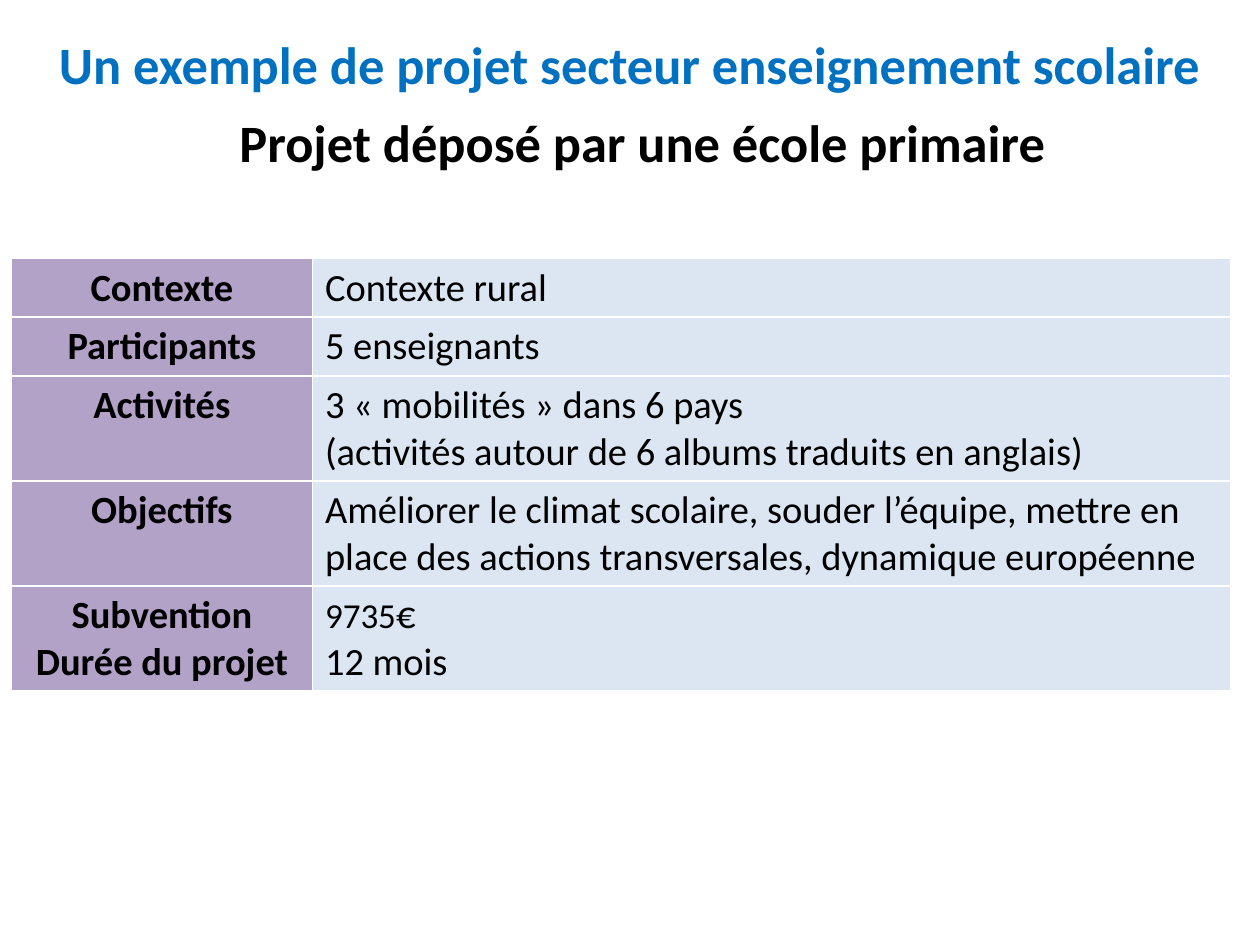
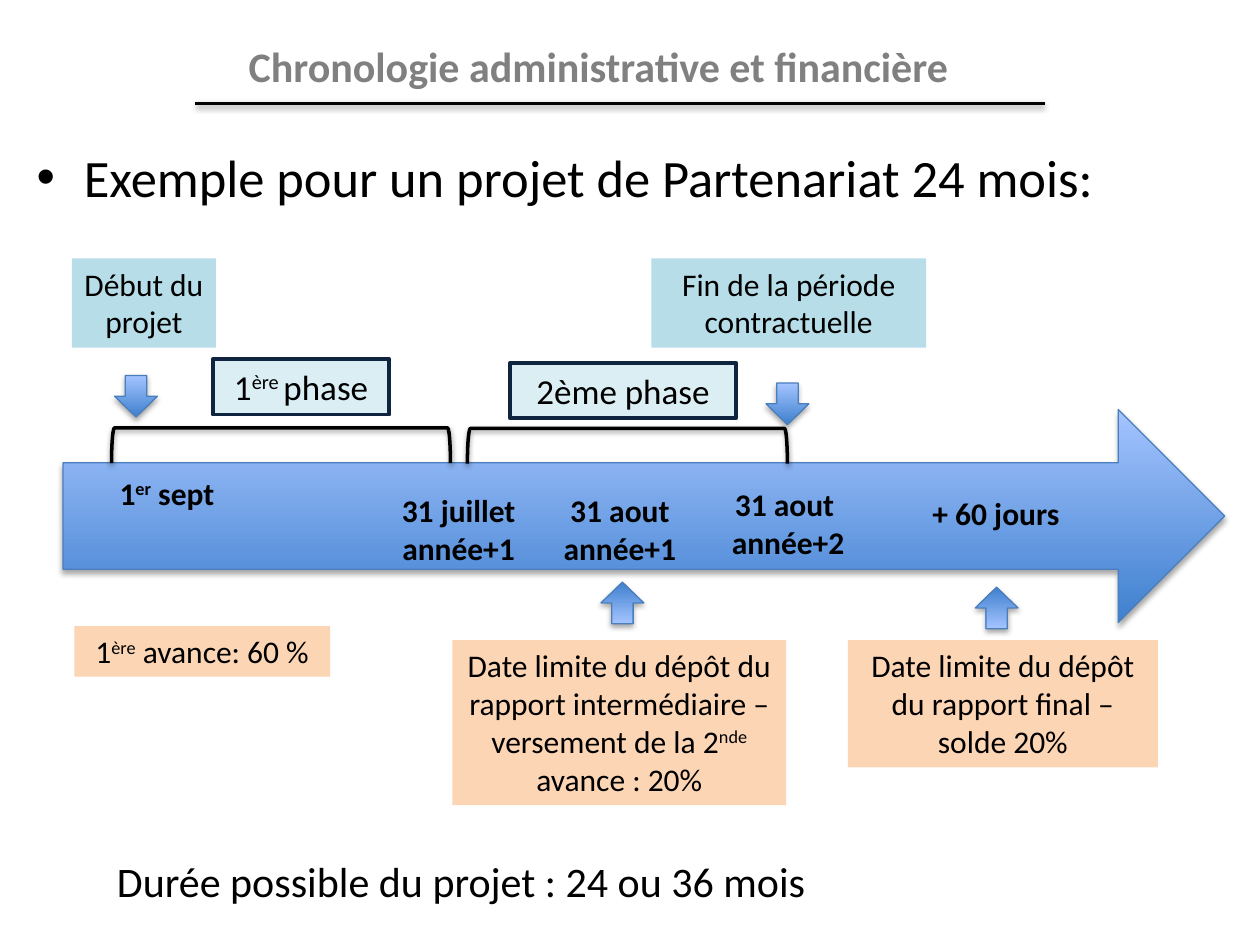
from dataclasses import dataclass

from pptx import Presentation
from pptx.dml.color import RGBColor
from pptx.enum.shapes import MSO_CONNECTOR, MSO_SHAPE
from pptx.enum.text import MSO_ANCHOR, PP_ALIGN
from pptx.oxml import parse_xml
from pptx.oxml.ns import nsdecls
from pptx.util import Inches, Pt

# Shared look
COLORS = {
    "black": "000000", "blue": "0070C0", "grey": "808080",
    "label": "B3A2C7", "value": "DCE6F2",
    "milestone": "B7DEE8", "payment": "FCD5B5",
    "phase": "DBEEF4", "phase_edge": "0F243E",
    "arrow_dark": "3F80CE", "arrow_light": "A4C4FF", "arrow_edge": "4B7EBC",
}
FONT = "Calibri"

# Grid of 100 columns by 75 rows
WIDTH, HEIGHT = Inches(10), Inches(7.5)
COLUMN, ROW = WIDTH / 100, HEIGHT / 75


@dataclass(frozen=True)
class Area:
    """Place on the grid, in columns and rows."""
    left: float
    top: float
    width: float
    height: float

    def lengths(self) -> tuple:
        return (round(self.left * COLUMN), round(self.top * ROW),
                round(self.width * COLUMN), round(self.height * ROW))


@dataclass(frozen=True)
class Style:
    size: float
    bold: bool = False
    color: str = "black"
    align: PP_ALIGN = PP_ALIGN.CENTER


@dataclass(frozen=True)
class Label:
    text: str
    area: Area
    style: Style
    fill: str = ""
    edge: str = ""


@dataclass(frozen=True)
class TableRow:
    label: str
    value: str


HEADING = Style(30, True)
BODY = Style(30, align=PP_ALIGN.LEFT)
DATE = Style(18, True)
NOTE = Style(18)
PHASE = Style(20)
ROW_LABEL = Style(22, True)
ROW_VALUE = Style(22, align=PP_ALIGN.LEFT)


def rgb(name: str) -> RGBColor:
    return RGBColor.from_string(COLORS[name])


def format_span(span, style: Style) -> None:
    span.font.name = FONT
    span.font.size = Pt(style.size)
    span.font.bold = style.bold
    span.font.color.rgb = rgb(style.color)


def write(frame, text: str, style: Style) -> None:
    """Lines become paragraphs; text between ^ marks is superscript."""
    frame.word_wrap = True
    frame.text = text.replace("^", "")
    for para, line in zip(frame.paragraphs, text.split("\n")):
        para.alignment = style.align
        para.space_before = Pt(0)
        first, *others = line.split("^")
        para.runs[0].text = first
        for part in others:
            para.add_run().text = part
        for index, span in enumerate(para.runs):
            format_span(span, style)
            if index % 2:
                span.font._element.set("baseline", "30000")


def place(shape, area: Area) -> None:
    shape.left, shape.top, shape.width, shape.height = area.lengths()


def set_title(page, text: str, area: Area, style: Style) -> None:
    title = page.shapes.title
    place(title, area)
    write(title.text_frame, text, style)
    title.text_frame.vertical_anchor = MSO_ANCHOR.MIDDLE


def cast_shadow(shape, opacity: int, distance: float) -> None:
    properties = shape._element.spPr
    properties.append(parse_xml(
        f'<a:effectLst {nsdecls("a")}>'
        f'<a:outerShdw blurRad="{Pt(3.1)}" dist="{Pt(distance)}" dir="5400000" rotWithShape="0">'
        f'<a:srgbClr val="{COLORS["black"]}"><a:alpha val="{opacity * 1000}"/></a:srgbClr>'
        '</a:outerShdw></a:effectLst>'))


def draw_label(page, label: Label) -> None:
    if label.fill:
        box = page.shapes.add_shape(MSO_SHAPE.RECTANGLE, *label.area.lengths())
        box.shadow.inherit = False
        box.fill.solid()
        box.fill.fore_color.rgb = rgb(label.fill)
        if label.edge:
            box.line.color.rgb = rgb(label.edge)
            box.line.width = Pt(2.25)
        else:
            box.line.fill.background()
    else:
        box = page.shapes.add_textbox(*label.area.lengths())
    write(box.text_frame, label.text, label.style)
    box.text_frame.vertical_anchor = MSO_ANCHOR.TOP


def draw_arrow(page, kind: MSO_SHAPE, area: Area, rotation: int = 0) -> None:
    arrow = page.shapes.add_shape(kind, *area.lengths())
    arrow.rotation = rotation
    arrow.fill.gradient()
    arrow.fill.gradient_angle = 90
    for stop, color in zip(arrow.fill.gradient_stops, ("arrow_dark", "arrow_light")):
        stop.color.rgb = rgb(color)
    arrow.line.color.rgb = rgb("arrow_edge")
    arrow.line.width = Pt(0.75)
    cast_shadow(arrow, 35, 1.8)


def style_stroke(line) -> None:
    line.line.color.rgb = rgb("black")
    line.line.width = Pt(2)
    cast_shadow(line, 38, 1.6)


def draw_bracket(page, span: Area) -> None:
    """A right bracket turned to open downwards over the given span."""
    upright = Area(span.left + (span.width - span.height) / 2,
                   span.top + (span.height - span.width) / 2,
                   span.height, span.width)
    bracket = page.shapes.add_shape(MSO_SHAPE.RIGHT_BRACKET, *upright.lengths())
    bracket.rotation = 270
    bracket.fill.background()
    style_stroke(bracket)


# Slide 1: project sheet
PROJECT_ROWS = [
    TableRow("Contexte", "Contexte rural"),
    TableRow("Participants", "5 enseignants"),
    TableRow("Activités", "3 « mobilités » dans 6 pays\n"
                          "(activités autour de 6 albums traduits en anglais)"),
    TableRow("Objectifs", "Améliorer le climat scolaire, souder l’équipe, mettre en place "
                          "des actions transversales, dynamique européenne"),
    TableRow("Subvention\nDurée du projet", "9735\n12 mois"),
]


def build_project(deck) -> None:
    page = deck.slides.add_slide(deck.slide_layouts[5])
    set_title(page, "Un exemple de projet secteur enseignement scolaire",
              Area(0, 2, 100, 6.1), Style(30, True, "blue"))
    draw_label(page, Label("Projet déposé par une école primaire",
                           Area(7.4, 8.2, 87.2, 13.1), HEADING))

    row_height = 4.1
    area = Area(0.9, 20.5, 96.8, row_height * len(PROJECT_ROWS))
    table = page.shapes.add_table(len(PROJECT_ROWS), 2, *area.lengths()).table
    table.horz_banding = False
    for column, width in zip(table.columns, (23.9, 72.9)):
        column.width = round(width * COLUMN)
    for index, row in enumerate(PROJECT_ROWS):
        cells = ((row.label, ROW_LABEL, "label"), (row.value, ROW_VALUE, "value"))
        for position, (text, style, fill) in enumerate(cells):
            cell = table.cell(index, position)
            cell.fill.solid()
            cell.fill.fore_color.rgb = rgb(fill)
            write(cell.text_frame, text, style)

    # The grant's figure is smaller than its currency sign
    grant = table.cell(len(PROJECT_ROWS) - 1, 1).text_frame.paragraphs[0]
    grant.runs[0].font.size = Pt(20)
    euro = grant.add_run()
    euro.text = "€"
    format_span(euro, ROW_VALUE)


# Slide 2: timeline
DATES = [
    Label("1^er^ sept", Area(5.5, 37.1, 15.5, 4), DATE),
    Label("31 juillet année+1", Area(29.7, 38.5, 13.4, 7.1), DATE),
    Label("31 aout année+1", Area(42.5, 38.5, 13.4, 7.1), DATE),
    Label("31 aout \nannée+2", Area(53.3, 38, 18.5, 7.1), DATE),
    Label("+ 60 jours", Area(72.7, 38.7, 12.7, 4), DATE),
]
NOTES = [
    Label("Début du projet", Area(5.7, 20.5, 11.45, 7.1), NOTE, "milestone"),
    Label("Fin de la période contractuelle", Area(51.7, 20.5, 21.8, 7.1), NOTE, "milestone"),
    Label("1^ère^ avance: 60 %", Area(5.9, 49.7, 20.3, 4), NOTE, "payment"),
    Label("Date limite du dépôt du rapport intermédiaire – versement de la 2^nde^ avance : 20%",
          Area(35.9, 50.8, 26.5, 13.1), NOTE, "payment"),
    Label("Date limite du dépôt du rapport final – solde 20%",
          Area(67.3, 50.8, 24.6, 10.1), NOTE, "payment"),
]
PHASES = [
    Label("1^ère ^phase", Area(16.9, 28.5, 14, 4.4), PHASE, "phase", "phase_edge"),
    Label("2ème phase", Area(40.5, 28.8, 17.9, 4.4), PHASE, "phase", "phase_edge"),
]
DURATION = Label("Durée possible du projet : 24 ou 36 mois", Area(8.3, 67.4, 58.9, 5),
                 Style(24, align=PP_ALIGN.LEFT))
# Left, top and rotation of each small arrow
POINTERS = [(9.1, 29.8, 0), (60.8, 30.4, 0), (47.7, 46.2, 180), (77.4, 46.6, 180)]
BRACKETS = [Area(8.85, 33.95, 26.9, 2.8), Area(37.1, 34, 25.4, 2.8)]


def build_timeline(deck) -> None:
    page = deck.slides.add_slide(deck.slide_layouts[1])
    set_title(page, "Chronologie administrative et financière",
              Area(6.2, 2.4, 82.6, 5.7), Style(24, True, "grey"))
    rule = page.shapes.add_connector(
        MSO_CONNECTOR.STRAIGHT, round(15.5 * COLUMN), round(8.2 * ROW),
        round(82.9 * COLUMN), round(8.2 * ROW))
    style_stroke(rule)

    body = page.placeholders[1]
    place(body, Area(1.9, 11, 90, 51.1))
    write(body.text_frame, "Exemple pour un projet de Partenariat 24 mois:", BODY)

    # Time arrow, its pointers and its phases
    draw_arrow(page, MSO_SHAPE.RIGHT_ARROW, Area(5, 32.5, 92.2, 16.9))
    for left, top, rotation in POINTERS:
        draw_arrow(page, MSO_SHAPE.DOWN_ARROW, Area(left, top, 3.4, 3.3), rotation)
    for span in BRACKETS:
        draw_bracket(page, span)
    for label in [*DATES, *NOTES, *PHASES, DURATION]:
        draw_label(page, label)


def main() -> None:
    deck = Presentation()
    deck.slide_width, deck.slide_height = WIDTH, HEIGHT
    build_project(deck)
    build_timeline(deck)
    deck.save("out.pptx")


if __name__ == "__main__":
    main()
